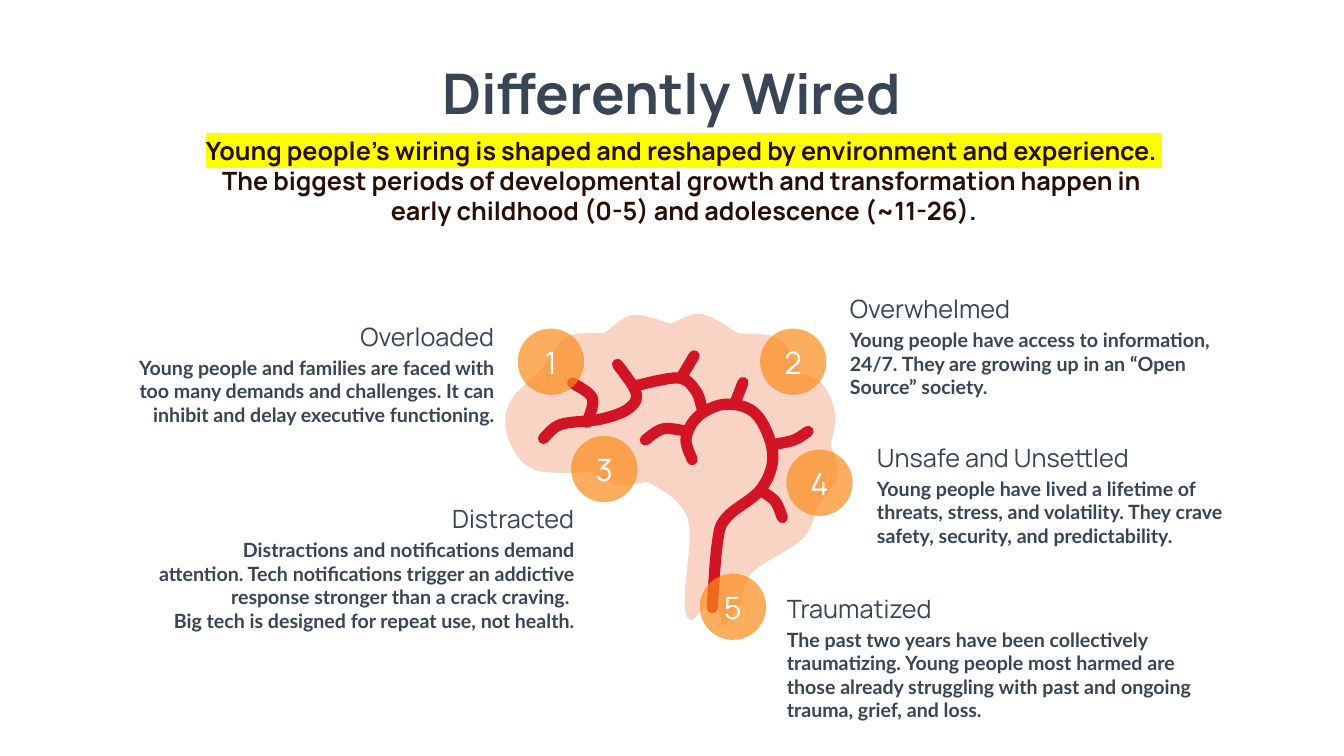
from dataclasses import dataclass

from lxml.etree import SubElement
from pptx import Presentation
from pptx.dml.color import RGBColor
from pptx.enum.shapes import MSO_SHAPE as Preset
from pptx.enum.text import MSO_ANCHOR as Anchor, MSO_AUTO_SIZE as AutoSize, PP_ALIGN as Align
from pptx.oxml.ns import qn
from pptx.util import Cm, Pt

HEADING_FONT, BODY_FONT = "Manrope", "Lato"
SLATE, BROWN, WHITE = "374556", "280E04", "FFFFFF"
ORANGE, PINK, RED, YELLOW = "FC8B1A", "F9D4C5", "D21424", "FFFF00"
BADGE_SIZE = 3.34
HEADING_HEIGHT, BODY_OFFSET, LINE_HEIGHT = 1.8, 1.74, 1.2
DRAWING_UNIT = Cm(0.0254)
SUBUNITS = 10
CURVE_STEPS = 8

Point = tuple[float, float]
Path = list[Point]


@dataclass(frozen=True)
class Badge:
    number: int
    left: float
    top: float


@dataclass(frozen=True)
class Callout:
    heading: str
    body: list[str]
    line_count: int
    edge: float
    top: float
    width: float
    align: Align = Align.LEFT


BADGES = [
    Badge(1, 26.09, 16.56),
    Badge(2, 38.3, 16.56),
    Badge(3, 28.78, 21.97),
    Badge(4, 39.62, 22.66),
    Badge(5, 35.26, 28.91),
]

CALLOUTS = [
    Callout("Overwhelmed",
            ["Young people have access to information, 24/7. They are growing up in an “Open Source” society."],
            3, 42.57, 14.66, 19.25),
    Callout("Unsafe and Unsettled",
            ["Young people have lived a lifetime of threats, stress, and volatility. "
             "They crave safety, security, and predictability."],
            3, 43.94, 22.15, 19.25),
    Callout("Traumatized",
            ["The past two years have been collectively traumatizing. Young people most harmed are "
             "those already struggling with past and ongoing trauma, grief, and loss."],
            4, 39.4, 29.77, 21.51),
    Callout("Distracted",
            ["Distractions and notifications demand attention. Tech notifications trigger an addictive "
             "response stronger than a crack craving. ",
             "Big tech is designed for repeat use, not health."],
            4, 29.18, 25.25, 21.51, Align.RIGHT),
    Callout("Overloaded",
            ["Young people and families are faced with too many demands and challenges. "
             "It can inhibit and delay executive functioning."],
            3, 25.15, 16.05, 19.25, Align.RIGHT),
]

INTRO = [
    "Young people’s wiring is shaped and reshaped by environment and experience. ",
    "The biggest periods of developmental growth and transformation happen in ",
    "early childhood (0-5) and adolescence (~11-26).",
]

BRAIN_LOBES: list[Path] = [
    [(1591, 741), (1546, 673), (1464, 661)],
    [(1464, 661), (1392, 623), (1330, 642)],
    [(1330, 642), (1255, 625), (1199, 661)],
    [(1199, 661), (1123, 669), (1073, 734)],
    [(1073, 734), (1010, 800), (1009, 872), (1060, 932), (1177, 937)],
    [(1177, 937), (1225, 962), (1285, 956)],
    [(1285, 956), (1340, 993), (1368, 1050), (1358, 1191), (1371, 1230), (1403, 1196)],
    [(1403, 1196), (1423, 1201), (1436, 1239), (1469, 1201)],
    [(1469, 1201), (1491, 1137), (1592, 1069), (1622, 1004)],
    [(1622, 1004), (1662, 944), (1648, 881)],
    [(1648, 881), (1657, 820), (1631, 761), (1591, 741)],
]

NERVES: list[Path] = [
    [(1413, 1206), (1423, 1078), (1441, 1027), (1510, 970), (1533, 900),
     (1500, 822), (1440, 802), (1385, 826), (1361, 870), (1373, 912)],
    [(1078, 870), (1113, 842), (1190, 832), (1245, 812), (1262, 780), (1225, 723)],
    [(1136, 760), (1175, 790), (1165, 838)],
    [(1262, 765), (1345, 750), (1380, 775), (1394, 815)],
    [(1377, 706), (1352, 748)],
    [(1280, 873), (1315, 851), (1360, 855)],
    [(1474, 759), (1458, 800)],
    [(1603, 856), (1575, 873), (1535, 882)],
    [(1552, 1027), (1538, 995), (1512, 975)],
]


def color(value: str) -> RGBColor:
    return RGBColor.from_string(value)


def paint(shape, fill: str) -> None:
    shape.shadow.inherit = False
    shape.fill.solid()
    shape.fill.fore_color.rgb = color(fill)
    shape.line.fill.background()


def smooth(path: Path) -> Path:
    padded = [path[0], *path, path[-1]]
    points = [path[0]]
    for before, start, end, after in zip(padded, padded[1:], padded[2:], padded[3:]):
        for step in range(1, CURVE_STEPS + 1):
            t = step / CURVE_STEPS
            points.append(tuple(
                b + t * (c - a + t * (2 * a - 5 * b + 4 * c - d + t * (3 * b - a - 3 * c + d))) / 2
                for a, b, c, d in zip(before, start, end, after)
            ))
    return [(x * SUBUNITS, y * SUBUNITS) for x, y in points]


def start_freeform(slide, point: Point):
    return slide.shapes.build_freeform(*point, DRAWING_UNIT / SUBUNITS)


def add_brain(slide) -> None:
    outline = [point for lobe in BRAIN_LOBES for point in smooth(lobe)]
    builder = start_freeform(slide, outline[0])
    builder.add_line_segments(outline[1:])
    paint(builder.convert_to_shape(), PINK)


def add_nerves(slide) -> None:
    paths = [smooth(nerve) for nerve in NERVES]
    builder = start_freeform(slide, paths[0][0])
    for index, path in enumerate(paths):
        if index:
            builder.move_to(*path[0])
        builder.add_line_segments(path[1:], close=False)
    shape = builder.convert_to_shape()
    shape.shadow.inherit = False
    shape.fill.background()
    shape.line.color.rgb = color(RED)
    shape.line.width = Pt(16)
    line = shape._element.spPr.find(qn("a:ln"))
    line.set("cap", "rnd")
    SubElement(line, qn("a:round"))


def write(shape, lines: list[str], font: str, size: float, ink: str, bold: bool, align: Align) -> None:
    frame = shape.text_frame
    frame.word_wrap = True
    frame.auto_size = AutoSize.NONE
    frame.text = "\n".join(lines)
    for paragraph in frame.paragraphs:
        paragraph.alignment = align
        paragraph.font.name = font
        paragraph.font.size = Pt(size)
        paragraph.font.bold = bold
        paragraph.font.color.rgb = color(ink)


def add_badge(slide, badge: Badge) -> None:
    shape = slide.shapes.add_shape(Preset.OVAL, Cm(badge.left), Cm(badge.top), Cm(BADGE_SIZE), Cm(BADGE_SIZE))
    paint(shape, ORANGE)
    SubElement(shape._element.spPr.find(qn("a:solidFill"))[0], qn("a:alpha"), val="70000")
    write(shape, [str(badge.number)], HEADING_FONT, 44, WHITE, False, Align.CENTER)
    shape.text_frame.vertical_anchor = Anchor.MIDDLE


def add_callout(slide, callout: Callout) -> None:
    left = callout.edge - callout.width if callout.align == Align.RIGHT else callout.edge
    heading = slide.shapes.add_textbox(Cm(left), Cm(callout.top), Cm(callout.width), Cm(HEADING_HEIGHT))
    write(heading, [callout.heading], HEADING_FONT, 36, SLATE, False, callout.align)
    body_height = callout.line_count * LINE_HEIGHT + 0.25
    body = slide.shapes.add_textbox(Cm(left), Cm(callout.top + BODY_OFFSET), Cm(callout.width), Cm(body_height))
    write(body, callout.body, BODY_FONT, 28, SLATE, True, callout.align)


def add_title(slide) -> None:
    title = slide.shapes.title
    title.left, title.top, title.width, title.height = Cm(21.21), Cm(2.84), Cm(25.27), Cm(3.68)
    write(title, ["Differently Wired"], HEADING_FONT, 80, SLATE, True, Align.CENTER)
    title.text_frame.vertical_anchor = Anchor.TOP


def add_intro(slide) -> None:
    intro = slide.shapes.add_textbox(Cm(5.72), Cm(6.68), Cm(57.48), Cm(4.88))
    write(intro, INTRO, HEADING_FONT, 36, BROWN, True, Align.CENTER)
    properties = intro.text_frame.paragraphs[0].runs[0]._r.get_or_add_rPr()
    SubElement(SubElement(properties, qn("a:highlight")), qn("a:srgbClr"), val=YELLOW)


def main() -> None:
    presentation = Presentation()
    presentation.slide_width, presentation.slide_height = Cm(67.72), Cm(38.1)
    slide = presentation.slides.add_slide(presentation.slide_layouts[5])
    slide.background.fill.solid()
    slide.background.fill.fore_color.rgb = color("FEFFFE")
    add_title(slide)
    add_intro(slide)
    add_brain(slide)
    add_nerves(slide)
    for badge in BADGES:
        add_badge(slide, badge)
    for callout in CALLOUTS:
        add_callout(slide, callout)
    presentation.save("out.pptx")


if __name__ == "__main__":
    main()
